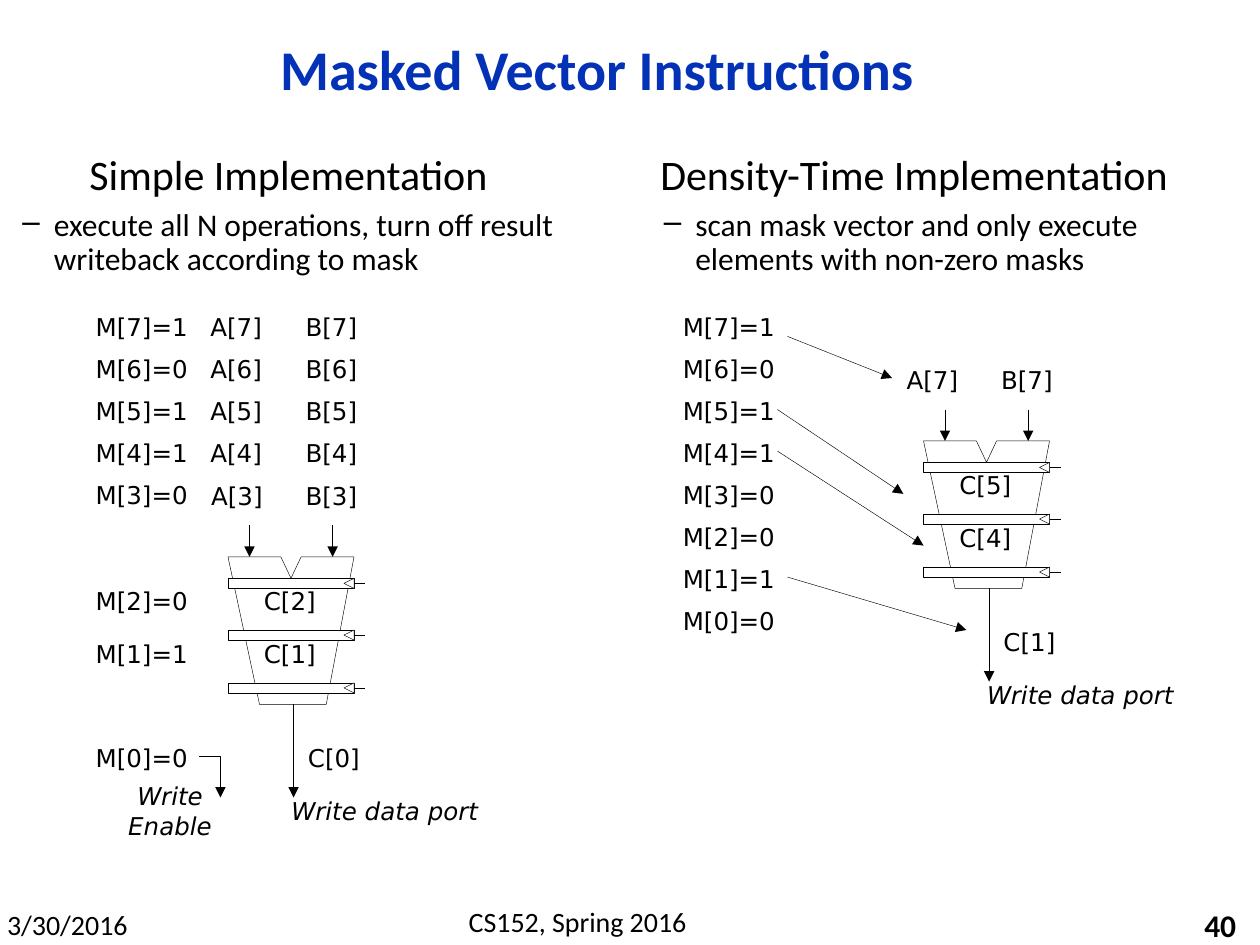
from lxml import etree
from pptx import Presentation
from pptx.dml.color import RGBColor
from pptx.enum.shapes import MSO_CONNECTOR as Conn, MSO_SHAPE as Kind
from pptx.enum.text import MSO_ANCHOR as Anchor, PP_ALIGN as Align
from pptx.oxml.ns import qn
from pptx.util import Inches, Pt

color = RGBColor.from_string
BLACK, WHITE, BLUE = "000000", "FFFFFF", "0332B7"

deck = Presentation()
deck.slide_width, deck.slide_height = Inches(10), Inches(7.5)
slide = deck.slides.add_slide(deck.slide_layouts[5])
shapes = slide.shapes


def text(words, x, y, w, h=0.33, box=None, size=14, font="DejaVu Sans", ink=BLACK,
         bold=False, italic=False, align=Align.CENTER, anchor=Anchor.MIDDLE,
         wrap=False, lines=None):
    """Put one paragraph in a new text box, or in the box given."""
    box = box or shapes.add_textbox(0, 0, 0, 0)
    box.left, box.top, box.width, box.height = map(Inches, (x, y, w, h))
    frame = box.text_frame
    frame.word_wrap, frame.vertical_anchor = wrap, anchor
    para = frame.paragraphs[0]
    para.alignment, para.line_spacing = align, lines
    run = para.add_run()
    run.text = words
    run.font.name, run.font.size = font, Pt(size)
    run.font.bold, run.font.italic = bold, italic
    run.font.color.rgb = color(ink)
    return frame


def draw(points, fill=None, arrow=False, close=False):
    """Draw a thin line through the points: a connector if there are two."""
    spots = [(Inches(x), Inches(y)) for x, y in points]
    if len(spots) == 2:
        item = shapes.add_connector(Conn.STRAIGHT, *spots[0], *spots[1])
    else:
        path = shapes.build_freeform(*spots[0])
        path.add_line_segments(spots[1:], close=close)
        item = path.convert_to_shape()
        if fill:
            item.fill.solid()
            item.fill.fore_color.rgb = color(fill)
        else:
            item.fill.background()
    item.line.color.rgb = color(BLACK)
    item.line.width = Pt(0.25)
    props = item.element.spPr
    if arrow:
        etree.SubElement(props.find(qn("a:ln")), qn("a:tailEnd"), type="triangle")
    etree.SubElement(props, qn("a:effectLst"))
    return item


# Title and footer
text("Masked Vector Instructions", 0.75, 0.17, 7.98, 0.81, box=shapes.title, size=32,
     font="Calibri", ink=BLUE, bold=True, wrap=True, lines=0.9)
text("3/30/2016", -0.05, 7.15, 1.17, 0.37, size=16, font="Calibri", anchor=Anchor.TOP)
text("CS152, Spring 2016", 2.92, 7.13, 3.33, 0.37, size=16, font="Calibri",
     anchor=Anchor.TOP, wrap=True)
text("40", 7.83, 7.18, 2.08, 0.32, size=18, font="Calibri", bold=True, align=Align.RIGHT)

# Headings, each with one dashed point
for head, point, x, w in (
    ("Simple Implementation",
     "execute all N operations, turn off result writeback according to mask", -0.42, 5.42),
    ("Density-Time Implementation",
     "scan mask vector and only execute elements with non-zero masks", 4.67, 5.17),
):
    frame = text(head, x, 1.16, w, 1.11, size=24, font="Calibri", wrap=True, lines=0.9)
    para = frame.add_paragraph()
    para.text, para.level = point, 1
    para.alignment, para.line_spacing, para.space_before = Align.LEFT, 0.9, Pt(5.4)
    para.font.name, para.font.size = "Calibri", Pt(18)
    para.font.color.rgb = color(BLACK)
    props = para._p.get_or_add_pPr()
    props.set("marL", str(Inches(0.75)))
    props.set("indent", str(Inches(-0.25)))
    etree.SubElement(props, qn("a:buChar"), char="–")

# Pipelined units: left, top, input index, results in flight, result leaving
for x, y, first, stages, last in ((1.81, 4.42, 3, (2, 1), 0), (7.33, 3.5, 7, (5, 4), 1)):
    outline = ((0, 0), (0.25, 1.17), (0.78, 1.17), (1, 0), (0.58, 0), (0.5, 0.17), (0.42, 0))
    draw([(x + dx, y + dy) for dx, dy in outline], close=True)

    # Pipeline registers with clock marks
    for row in (0.17, 0.58, 1):
        top = y + row
        bar = shapes.add_shape(Kind.RECTANGLE, Inches(x), Inches(top), Inches(1), Inches(0.08))
        bar.shadow.inherit = False
        bar.fill.solid()
        bar.fill.fore_color.rgb = color(WHITE)
        bar.line.color.rgb = color(BLACK)
        bar.line.width = Pt(0.25)
        draw([(x + 1, top + 0.08), (x + 0.92, top + 0.04), (x + 1, top)], WHITE, close=True)
        tick = draw([(x + 1, top + 0.04), (x + 1.09, top + 0.04)])
        tick.begin_connect(bar, 3)

    # Inputs
    for name, dx, stem in (("A", -0.25, 0.17), ("B", 0.5, 0.83)):
        text(f"{name}[{first}]", x + dx, y - 0.65, 0.64)
        draw([(x + stem, y - 0.25), (x + stem, y)], arrow=True)

    # Results
    for row, index in enumerate(stages):
        text(f"C[{index}]", x + 0.17, y + 0.18 + row * 0.42, 0.64)
    text(f"C[{last}]", x + 0.52, y + 1.43, 0.64)
    draw([(x + 0.52, y + 1.17), (x + 0.52, y + 1.91)], arrow=True)
    text("Write data port", x + 0.4, y + 1.85, 1.69, italic=True)

# Mask bits, from element 7 down to 0
late = {2: 4.6, 1: 5.02, 0: 5.85}
for row, bit in enumerate("10110010"):
    index = 7 - row
    y = 2.43 + row / 3
    text(f"M[{index}]={bit}", 0.65, late.get(index, y), 0.95)
    text(f"M[{index}]={bit}", 5.31, y, 0.95)
    if index > 3:  # operands still waiting
        text(f"A[{index}]", 1.56, y, 0.63)
        text(f"B[{index}]", 2.31, y, 0.64)

# Write enable
draw([(1.58, 6), (1.75, 6), (1.75, 6.33)], arrow=True)
text("Write Enable", 0.63, 6.27, 1.44, italic=True)

# Set mask bits to their elements
for start, end in (
    ((6.25, 2.67), (7.08, 3)),
    ((6.17, 3.25), (7.17, 3.92)),
    ((6.17, 3.58), (7.33, 4.33)),
    ((6.25, 4.58), (7.67, 5)),
):
    draw([start, end], arrow=True)

deck.save("out.pptx")
